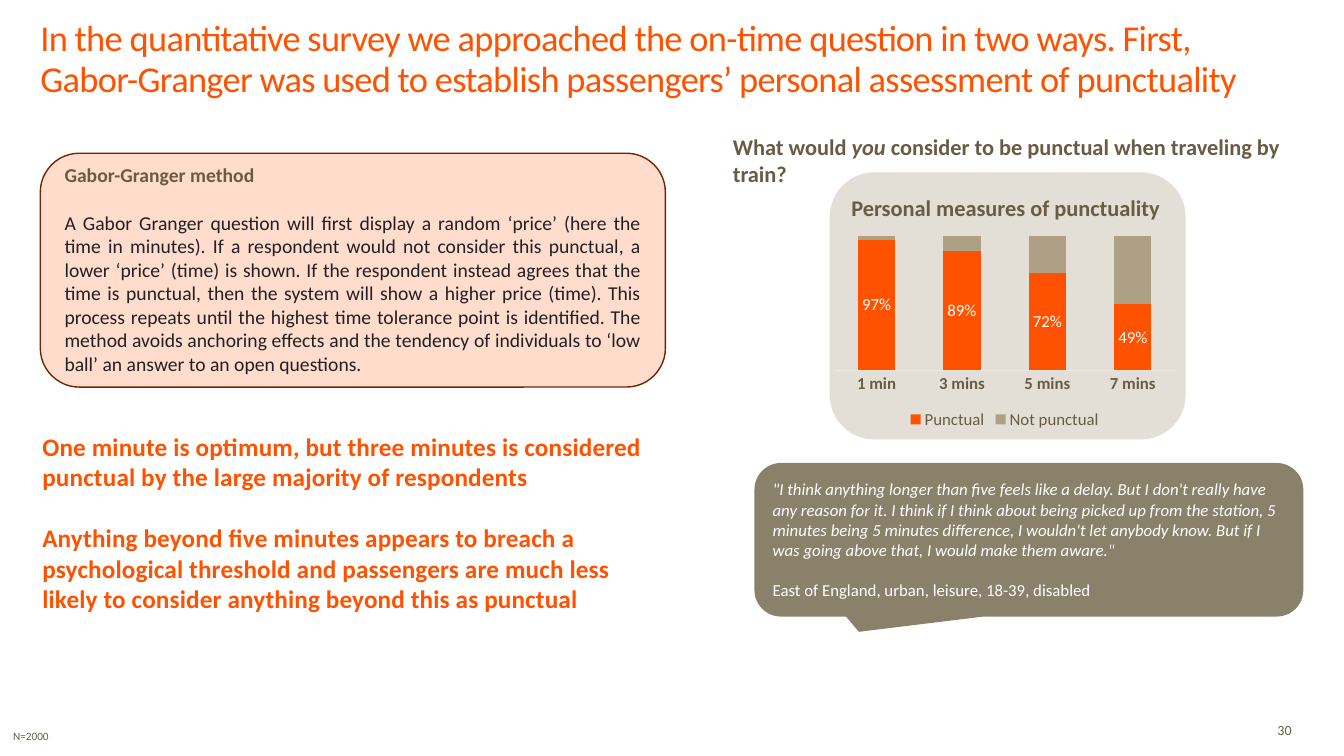
import pptx
import pptx.chart.data
import pptx.dml.color
import pptx.enum.chart
import pptx.enum.shapes
import pptx.enum.text
import pptx.util

Inches, Pt = pptx.util.Inches, pptx.util.Pt
Align = pptx.enum.text.PP_ALIGN
Anchor = pptx.enum.text.MSO_ANCHOR
Shape = pptx.enum.shapes.MSO_SHAPE
Chart = pptx.enum.chart


class Theme:
    font = "Calibri"
    orange, peach, rust = "FF5200", "FFDCCC", "702400"
    brown, taupe, tan = "685C45", "8A816B", "AEA085"
    sand, pale, ink, white = "E4DFD6", "EBE7E1", "202124", "FFFFFF"
    title, lead, head, body, small, page, note = 26, 18, 16, 14, 12, 10, 8


def color(name):
    return pptx.dml.color.RGBColor.from_string(name)


def style(font, size, tone, bold=False, italic=False):
    font.name, font.size = Theme.font, Pt(size)
    font.bold, font.italic = bold, italic
    font.color.rgb = color(tone)


def write(frame, parts, size=Theme.body, tone=Theme.brown, bold=False,
          italic=False, align=Align.LEFT, before=0, line=None, track=0,
          anchor=None, inset=0, first=True):
    """Add one paragraph; parts is a text or a list of (text, italic)."""
    if first:
        frame.word_wrap = True
        frame.margin_left = frame.margin_right = Inches(inset)
        frame.margin_top = frame.margin_bottom = Inches(inset / 2)
        frame.vertical_anchor = anchor or Anchor.TOP
    para = frame.paragraphs[0] if first else frame.add_paragraph()
    para.alignment = align
    if before:
        para.space_before = Pt(before)
    if line:
        para.line_spacing = Pt(line)
    for words, slant in [(parts, italic)] if isinstance(parts, str) else parts:
        run = para.add_run()
        run.text = words
        style(run.font, size, tone, bold, slant)
        if track:
            run._r.get_or_add_rPr().set("spc", str(round(track * 100)))


def label(slide, box, parts, **form):
    frame = slide.shapes.add_textbox(*map(Inches, box)).text_frame
    write(frame, parts, **form)
    return frame


def panel(slide, kind, box, fill, edge=None):
    shape = slide.shapes.add_shape(kind, *map(Inches, box))
    shape.shadow.inherit = False
    shape.fill.solid()
    shape.fill.fore_color.rgb = color(fill)
    if edge:
        shape.line.color.rgb = color(edge)
        shape.line.width = Pt(1)
    else:
        shape.line.fill.background()
    return shape


# Method panel, top left
def method(slide, x, y, w, h):
    panel(slide, Shape.ROUNDED_RECTANGLE, (x, y, w, h), Theme.peach, Theme.rust)
    frame = label(slide, (x + 0.24, y + 0.1, w - 0.48, h - 0.32),
                  "Gabor-Granger method", bold=True)
    write(frame, "A Gabor Granger question will first display a random ‘price’ "
          "(here the time in minutes). If a respondent would not consider this "
          "punctual, a lower ‘price’ (time) is shown. If the respondent instead "
          "agrees that the time is punctual, then the system will show a higher "
          "price (time). This process repeats until the highest time tolerance "
          "point is identified. The method avoids anchoring effects and the "
          "tendency of individuals to ‘low ball’ an answer to an open questions.",
          tone=Theme.ink, align=Align.JUSTIFY, before=17, first=False)


# Key findings, bottom left
def findings(slide, x, y, w, h):
    form = dict(size=Theme.lead, tone=Theme.orange, bold=True, track=0.1)
    frame = label(slide, (x, y, w, h), "One minute is optimum, but three minutes "
                  "is considered punctual by the large majority of respondents",
                  **form)
    write(frame, "Anything beyond five minutes appears to breach a psychological "
          "threshold and passengers are much less likely to consider anything "
          "beyond this as punctual", before=22, first=False, **form)


# Chart panel, top right
def results(slide, x, y, w, h):
    panel(slide, Shape.ROUNDED_RECTANGLE, (x, y, w, h), Theme.sand)
    label(slide, (x - 0.02, y + 0.22, w, 0.38), "Personal measures of punctuality",
          size=Theme.head, bold=True, align=Align.CENTER)

    data = pptx.chart.data.CategoryChartData(number_format="0%")
    data.categories = ["1 min", "3 mins", "5 mins", "7 mins"]
    data.add_series("Punctual", (0.97, 0.89, 0.72, 0.49))
    data.add_series("Not punctual", (0.03, 0.11, 0.28, 0.51))
    place = map(Inches, (x - 0.03, y + 0.59, w, 2))
    chart = slide.shapes.add_chart(Chart.XL_CHART_TYPE.COLUMN_STACKED_100,
                                   *place, data).chart
    style(chart.font, Theme.page, Theme.brown)
    chart.has_title = False
    chart.has_legend = True
    chart.legend.position = Chart.XL_LEGEND_POSITION.BOTTOM
    chart.legend.include_in_layout = False
    style(chart.legend.font, Theme.small, Theme.brown)

    plot = chart.plots[0]
    plot.gap_width, plot.overlap, plot.vary_by_categories = 129, 100, False
    for bars, tone in zip(plot.series, (Theme.orange, Theme.tan)):
        bars.format.fill.solid()
        bars.format.fill.fore_color.rgb = color(tone)
    marks = plot.series[0].data_labels
    marks.show_value = True
    marks.position = Chart.XL_LABEL_POSITION.CENTER
    marks.number_format, marks.number_format_is_linked = "0%", False
    style(marks.font, Theme.small, Theme.white)

    axis = chart.category_axis
    axis.major_tick_mark = axis.minor_tick_mark = Chart.XL_TICK_MARK.NONE
    axis.format.line.color.rgb = color(Theme.pale)
    axis.format.line.width = Pt(0.75)
    style(axis.tick_labels.font, Theme.small, Theme.brown, bold=True)
    scale = chart.value_axis
    scale.visible = scale.has_major_gridlines = False
    scale.minimum_scale, scale.maximum_scale = 0, 1


# Passenger quote, bottom right
def quote(slide, x, y, w, h):
    bubble = panel(slide, Shape.ROUNDED_RECTANGULAR_CALLOUT, (x, y, w, h),
                   Theme.taupe, Theme.taupe)
    for i, value in enumerate((-0.31, 0.6, 0.17)):
        bubble.adjustments[i] = value
    form = dict(size=Theme.small, tone=Theme.white)
    write(bubble.text_frame, "\"I think anything longer than five feels like a "
          "delay. But I don't really have any reason for it. I think if I think "
          "about being picked up from the station, 5 minutes being 5 minutes "
          "difference, I wouldn't let anybody know. But if I was going above "
          "that, I would make them aware.\"",
          italic=True, anchor=Anchor.MIDDLE, inset=0.1, **form)
    write(bubble.text_frame, "East of England, urban, leisure, 18-39, disabled",
          before=14.5, first=False, **form)


# Title, question and footer
def frame(slide):
    label(slide, (0.4, 0.52, 12.28, 0.47), "In the quantitative survey we "
          "approached the on-time question in two ways. First, Gabor-Granger was "
          "used to establish passengers’ personal assessment of punctuality",
          size=Theme.title, tone=Theme.orange, line=29, track=-0.5,
          anchor=Anchor.BOTTOM)
    label(slide, (7.17, 1.27, 6.07, 0.37),
          [("What would ", False), ("you", True),
           (" consider to be punctual when traveling by train?", False)],
          size=Theme.head, bold=True, inset=0.1)
    label(slide, (12.57, 7.13, 0.24, 0.22), "30", size=Theme.page,
          align=Align.RIGHT, anchor=Anchor.MIDDLE)
    label(slide, (0.13, 7.24, 6.1, 0.22), "N=2000", size=Theme.note)


def main():
    deck = pptx.Presentation()
    deck.slide_width, deck.slide_height = Inches(13.33), Inches(7.5)
    slide = deck.slides.add_slide(deck.slide_layouts[6])
    method(slide, 0.4, 1.52, 6.2, 2.32)
    findings(slide, 0.42, 4.28, 6.15, 2)
    results(slide, 8.23, 1.71, 3.53, 2.65)
    quote(slide, 7.49, 4.6, 5.43, 1.51)
    frame(slide)
    deck.save("out.pptx")


if __name__ == "__main__":
    main()
